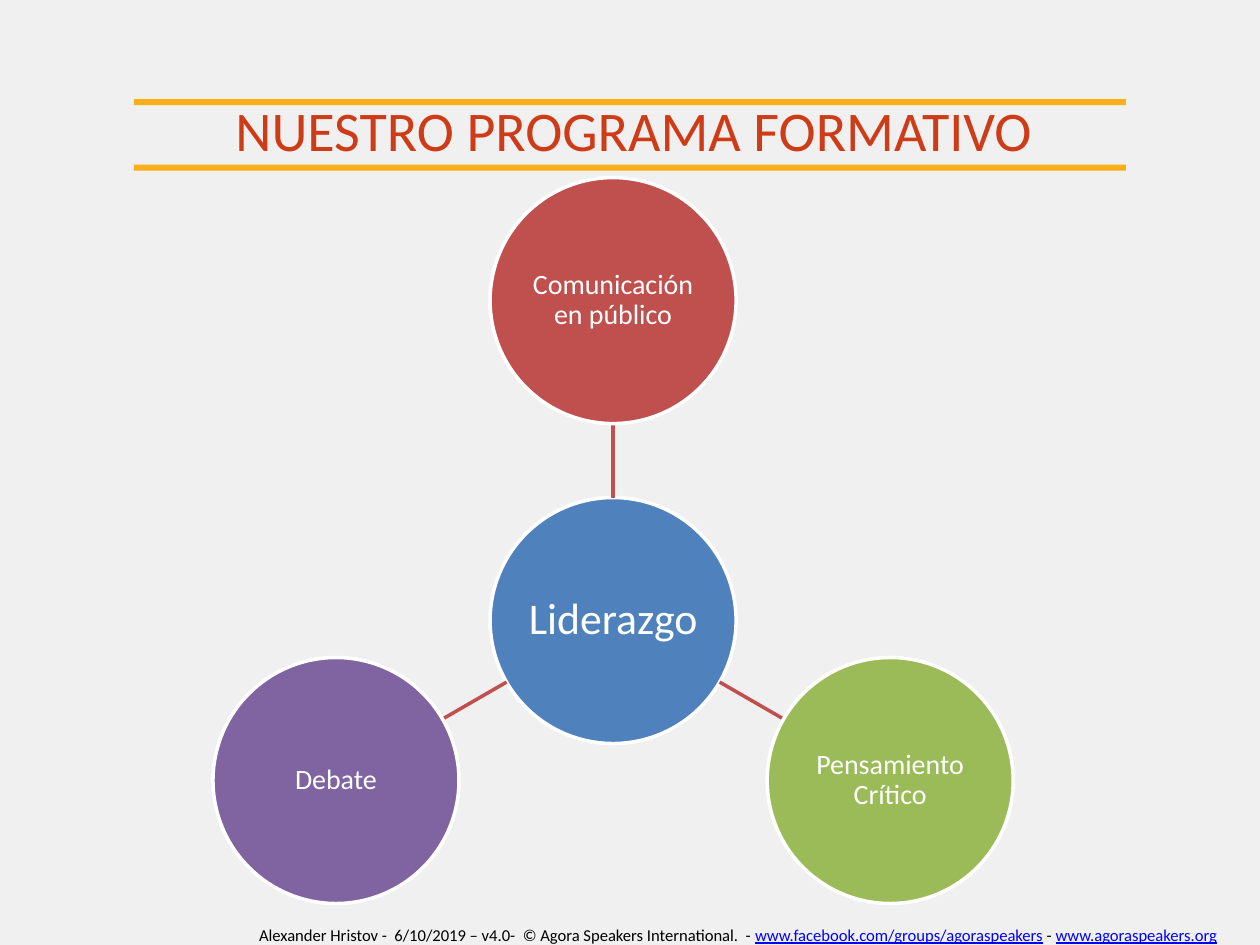
from math import cos, radians, sin

from lxml.etree import SubElement
from pptx import Presentation
from pptx.dml.color import RGBColor
from pptx.enum.shapes import MSO_CONNECTOR, MSO_SHAPE
from pptx.enum.text import MSO_ANCHOR, MSO_AUTO_SIZE, PP_ALIGN
from pptx.oxml.ns import qn
from pptx.util import Cm, Pt

BACKGROUND = RGBColor(0xF0, 0xF0, 0xF0)
GOLD = RGBColor(0xF8, 0xAF, 0x18)
ORANGE = RGBColor(0xCE, 0x3C, 0x17)
BLUE = RGBColor(0x4F, 0x81, 0xBD)
RED = RGBColor(0xC0, 0x50, 0x4D)
GREEN = RGBColor(0x9B, 0xBB, 0x59)
PURPLE = RGBColor(0x80, 0x64, 0xA2)
LINK = RGBColor(0x00, 0x00, 0xFF)
BLACK = RGBColor(0x00, 0x00, 0x00)
WHITE = RGBColor(0xFF, 0xFF, 0xFF)

# Radial diagram geometry, in centimetres
HUB_X, HUB_Y = 12.36, 12.51
RADIUS = 2.48
ORBIT = 6.45

# Satellite topics: text, fill, angle in degrees clockwise from the right
TOPICS = [
    ("Comunicación en público", RED, -90),
    ("Pensamiento Crítico", GREEN, 30),
    ("Debate", PURPLE, 150),
]

FOOTER = [
    ("Alexander Hristov -  6/10/2019 – v4.0-  © Agora Speakers International.  - ", False),
    ("www.facebook.com/groups/agoraspeakers", True),
    (" - ", False),
    ("www.agoraspeakers.org", True),
]


def set_attrs(obj, **values):
    for name, value in values.items():
        setattr(obj, name, value)


def format_font(font, size, color, underline=False):
    set_attrs(font, name="Calibri", size=Pt(size), underline=underline)
    font.color.rgb = color


def set_margins(tf, margin):
    for side in ("left", "top", "right", "bottom"):
        setattr(tf, f"margin_{side}", margin)


def polar(distance, angle):
    """Point at a distance from the hub's centre."""
    a = radians(angle)
    return HUB_X + distance * cos(a), HUB_Y + distance * sin(a)


def add_title(slide, text):
    sp = slide.shapes.title
    set_attrs(sp, left=Cm(0.03), top=Cm(1.8), width=Cm(25.5), height=Cm(1.52))
    tf = sp.text_frame
    set_attrs(tf, text=text, auto_size=MSO_AUTO_SIZE.NONE,
              vertical_anchor=MSO_ANCHOR.TOP)
    p = tf.paragraphs[0]
    p.alignment = PP_ALIGN.CENTER
    format_font(p.runs[0].font, 32, ORANGE)


def add_bar(slide, top):
    sp = slide.shapes.add_shape(MSO_SHAPE.RECTANGLE, Cm(2.7), Cm(top), Cm(20), Cm(0.12))
    sp.shadow.inherit = False
    sp.fill.solid()
    sp.fill.fore_color.rgb = GOLD
    sp.line.fill.background()


def add_circle(slide, center, text, fill, size, margin):
    x, y = center
    sp = slide.shapes.add_shape(MSO_SHAPE.OVAL, Cm(x - RADIUS), Cm(y - RADIUS),
                                Cm(2 * RADIUS), Cm(2 * RADIUS))
    sp.shadow.inherit = False
    sp.fill.solid()
    sp.fill.fore_color.rgb = fill
    sp.line.color.rgb = WHITE
    sp.line.width = Pt(2)
    tf = sp.text_frame
    set_attrs(tf, text=text, word_wrap=True, vertical_anchor=MSO_ANCHOR.MIDDLE)
    set_margins(tf, Cm(margin))
    p = tf.paragraphs[0]
    set_attrs(p, alignment=PP_ALIGN.CENTER, line_spacing=0.9)
    format_font(p.runs[0].font, size, WHITE)


def add_spoke(slide, angle):
    ends = polar(RADIUS, angle) + polar(ORBIT - RADIUS, angle)
    line = slide.shapes.add_connector(MSO_CONNECTOR.STRAIGHT, *map(Cm, ends))
    line.line.color.rgb = RED
    line.line.width = Pt(2)
    SubElement(line._element.spPr, qn("a:effectLst"))


def add_footer(slide):
    tf = slide.shapes.add_textbox(Cm(4.46), Cm(18.52), Cm(20.84), Cm(0.53)).text_frame
    set_attrs(tf, word_wrap=True, margin_bottom=0)
    p = tf.paragraphs[0]
    p.alignment = PP_ALIGN.CENTER
    for text, is_link in FOOTER:
        r = p.add_run()
        r.text = text
        format_font(r.font, 9.5, LINK if is_link else BLACK, is_link)


def main():
    prs = Presentation()
    set_attrs(prs, slide_width=Cm(25.4), slide_height=Cm(19.05))
    slide = prs.slides.add_slide(prs.slide_layouts[5])
    slide.background.fill.solid()
    slide.background.fill.fore_color.rgb = BACKGROUND

    # Heading between two bars
    for top in (2, 3.32):
        add_bar(slide, top)
    add_title(slide, "NUESTRO PROGRAMA FORMATIVO")

    # Hub with its satellites
    add_circle(slide, (HUB_X, HUB_Y), "Liderazgo", BLUE, 25, 0.05)
    for text, fill, angle in TOPICS:
        add_spoke(slide, angle)
        add_circle(slide, polar(ORBIT, angle), text, fill, 16, 0.03)

    add_footer(slide)
    prs.save("out.pptx")


if __name__ == "__main__":
    main()
